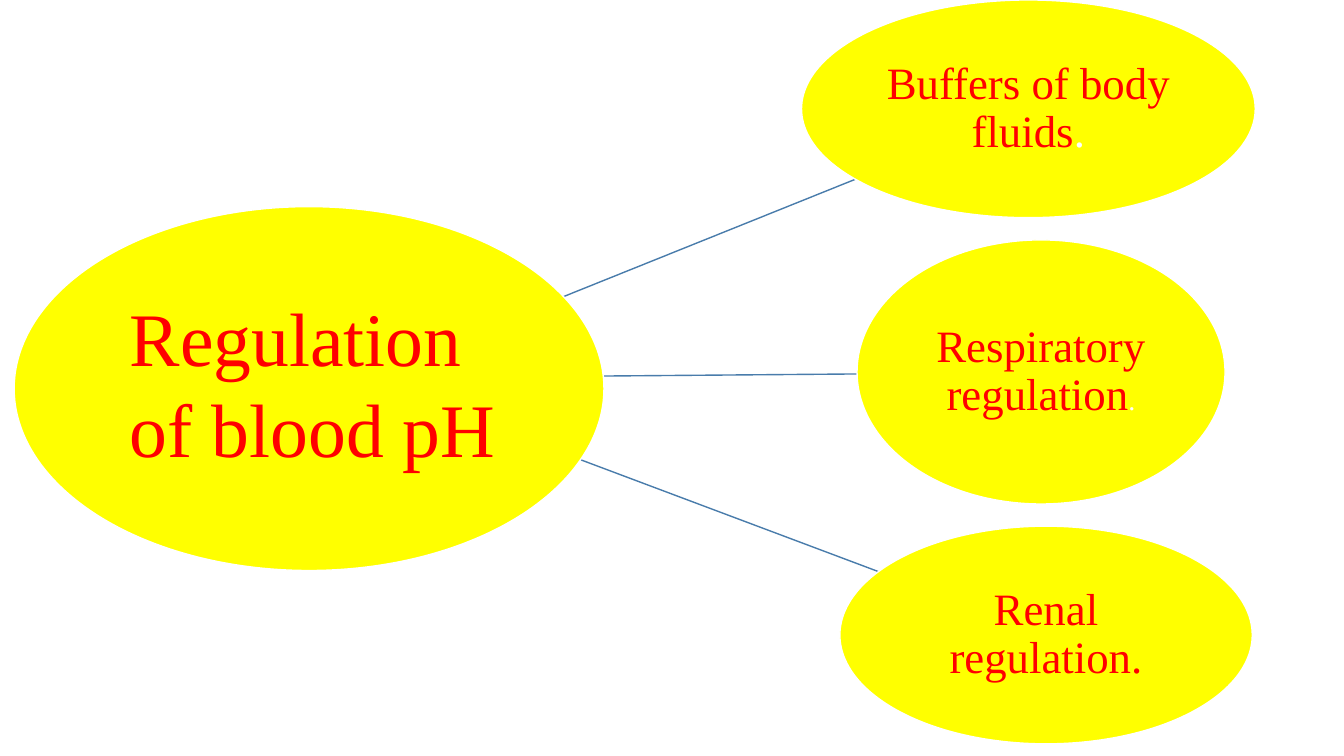
from dataclasses import dataclass

from lxml import etree
from pptx import Presentation
from pptx.dml.color import RGBColor
from pptx.enum.shapes import MSO_CONNECTOR, MSO_SHAPE
from pptx.enum.text import MSO_ANCHOR, PP_ALIGN
from pptx.oxml.ns import qn
from pptx.util import Inches, Pt

OVAL = MSO_SHAPE.OVAL
STRAIGHT = MSO_CONNECTOR.STRAIGHT
MIDDLE = MSO_ANCHOR.MIDDLE
CENTER = PP_ALIGN.CENTER


@dataclass(frozen=True)
class Theme:
    font: str = "Times New Roman"
    yellow: RGBColor = RGBColor(0xFF, 0xFF, 0x00)
    red: RGBColor = RGBColor(0xFF, 0x00, 0x00)
    white: RGBColor = RGBColor(0xFF, 0xFF, 0xFF)
    blue: RGBColor = RGBColor(0x49, 0x7C, 0xAB)
    title_size: int = 54
    branch_size: int = 32
    small_size: int = 20
    line_width: int = 1


class DiagramSlide:
    def __init__(self, slide, theme):
        self.shapes = slide.shapes
        self.theme = theme

    def style_span(self, span, size, color):
        span.font.name = self.theme.font
        span.font.size = Pt(size)
        span.font.color.rgb = color

    def link(self, start, end):
        line = self.shapes.add_connector(STRAIGHT, *map(Inches, start + end))
        line.line.color.rgb = self.theme.blue
        line.line.width = Pt(self.theme.line_width)
        properties = line._element.find(qn("p:spPr"))
        etree.SubElement(properties, qn("a:effectLst"))

    def ellipse(self, place):
        oval = self.shapes.add_shape(OVAL, *map(Inches, place))
        oval.shadow.inherit = False
        oval.fill.solid()
        oval.fill.fore_color.rgb = self.theme.yellow
        oval.line.color.rgb = self.theme.white
        oval.line.width = Pt(self.theme.line_width)
        return oval

    def branch(self, place, spans):
        frame = self.ellipse(place).text_frame
        frame.word_wrap = True
        frame.vertical_anchor = MIDDLE
        frame.margin_left = frame.margin_right = Inches(0.02)
        frame.margin_top = frame.margin_bottom = Inches(0.02)
        para = frame.paragraphs[0]
        para.alignment = CENTER
        para.line_spacing = 0.9
        for text, size, color in spans:
            span = para.add_run()
            span.text = text
            self.style_span(span, size, color)

    def title(self, place, text):
        frame = self.shapes.add_textbox(*map(Inches, place)).text_frame
        frame.word_wrap = True
        frame.text = text
        self.style_span(frame.paragraphs[0].runs[0], self.theme.title_size, self.theme.red)


def main():
    deck = Presentation()
    deck.slide_width = Inches(13.33)
    deck.slide_height = Inches(7.5)
    theme = Theme()
    page = DiagramSlide(deck.slides.add_slide(deck.slide_layouts[6]), theme)

    links = [
        ((4.85, 4.22), (8.71, 5.67)),
        ((4.85, 3.74), (8.5, 3.71)),
        ((4.85, 3.24), (8.48, 1.78)),
    ]
    for start, end in links:
        page.link(start, end)

    page.ellipse((0.14, 2.05, 5.85, 3.61))

    large, small = theme.branch_size, theme.small_size
    branches = [
        ((7.95, 0, 4.5, 2.16),
         [("Buffers of body fluids", large, theme.red), (".", large, theme.white)]),
        ((8.5, 2.38, 3.65, 2.62),
         [("Respiratory regulation", large, theme.red), (".", small, theme.white)]),
        ((8.33, 5.22, 4.09, 2.16),
         [("Renal regulation.", large, theme.red)]),
    ]
    for place, spans in branches:
        page.branch(place, spans)

    page.title((1.19, 2.84, 4.25, 1.92), "Regulation of blood pH")
    deck.save("out.pptx")


if __name__ == "__main__":
    main()
